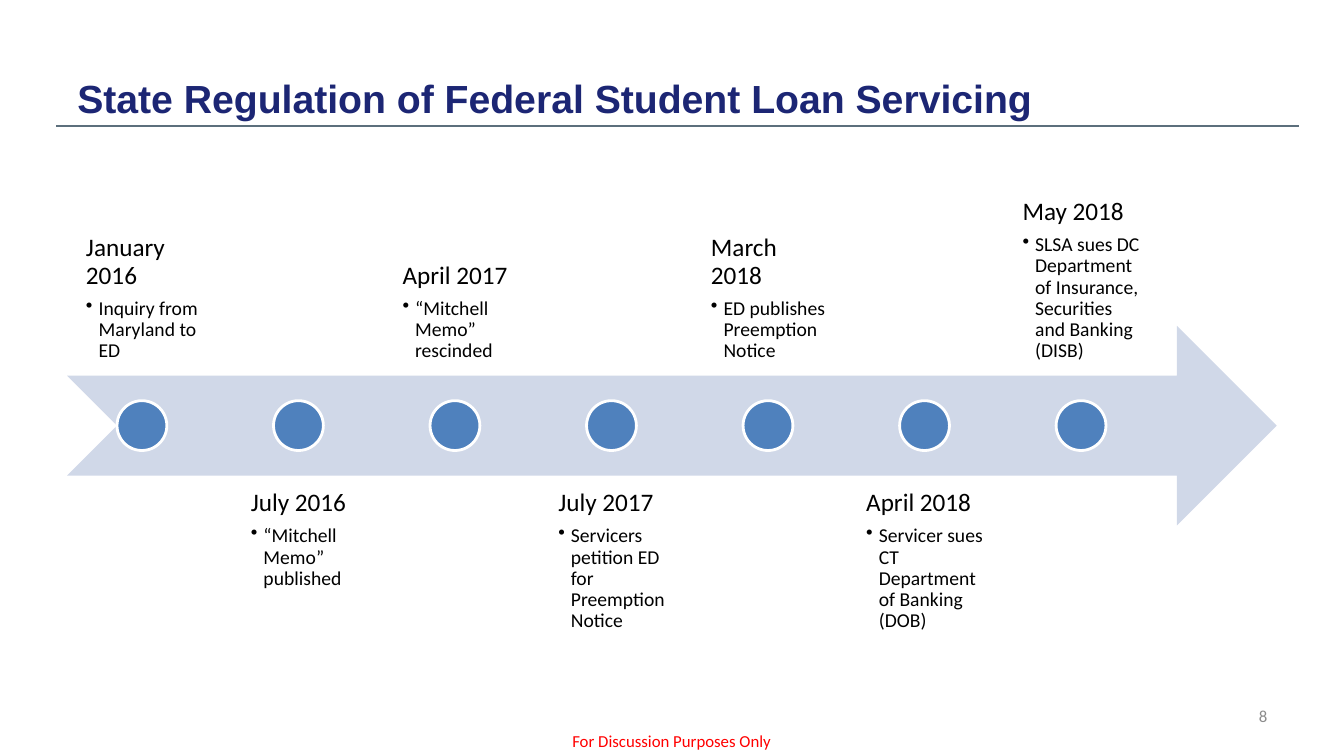
import pptx
import pptx.dml.color
import pptx.enum.shapes
import pptx.enum.text
import pptx.oxml
import pptx.oxml.ns
import pptx.util

Pt = pptx.util.Pt
RGBColor = pptx.dml.color.RGBColor
Shape = pptx.enum.shapes.MSO_SHAPE
Anchor = pptx.enum.text.MSO_ANCHOR
Align = pptx.enum.text.PP_ALIGN

NAVY = RGBColor(0x1C, 0x26, 0x74)
SLATE = RGBColor(0x5C, 0x6F, 0x7C)
PALE_BLUE = RGBColor(0xD0, 0xD8, 0xE8)
BLUE = RGBColor(0x4F, 0x81, 0xBD)
WHITE = RGBColor(0xFF, 0xFF, 0xFF)
BLACK = RGBColor(0x00, 0x00, 0x00)
GRAY = RGBColor(0x8C, 0x8C, 0x8C)
RED = RGBColor(0xFF, 0x00, 0x00)

EVENTS = [
    ("January 2016", "Inquiry from Maryland to ED"),
    ("July 2016", "“Mitchell Memo” published"),
    ("April 2017", "“Mitchell Memo” rescinded"),
    ("July 2017", "Servicers petition ED for Preemption Notice"),
    ("March 2018", "ED publishes Preemption Notice"),
    ("April 2018", "Servicer sues CT Department of Banking (DOB)"),
    ("May 2018", "SLSA sues DC Department of Insurance, Securities and Banking (DISB)"),
]

FIRST_CENTER = 101.4
EVENT_STEP = 111.8
ARROW_TOP = 232.7
ARROW_HEIGHT = 142.6
EVENT_WIDTH = 106.6
EVENT_TOP_ABOVE = 126
EVENT_TOP_BELOW = 339.8
DOT_SIZE = 35.6


def write(paragraph, text, size=18, color=BLACK, font="Calibri", bold=False,
          align=Align.LEFT, line_spacing=None, space_after=0, bullet_indent=None):
    if bullet_indent:
        paragraph.level = 1
        properties = paragraph._p.get_or_add_pPr()
        properties.set("marL", str(Pt(bullet_indent)))
        properties.set("indent", str(-Pt(bullet_indent)))
        bullet = pptx.oxml.parse_xml(
            f'<a:buChar {pptx.oxml.ns.nsdecls("a")} char="•"/>')
        properties.append(bullet)
    paragraph.alignment = align
    paragraph.space_before = Pt(0)
    paragraph.space_after = Pt(space_after)
    if line_spacing:
        paragraph.line_spacing = line_spacing
    run = paragraph.add_run()
    run.text = text
    run.font.size = Pt(size)
    run.font.name = font
    run.font.bold = bold
    run.font.color.rgb = color


def add_title(slide, text):
    title = slide.shapes.title
    title.left, title.top, title.width, title.height = Pt(48), Pt(0), Pt(864), Pt(90)
    frame = title.text_frame
    frame.auto_size = pptx.enum.text.MSO_AUTO_SIZE.NONE
    frame.vertical_anchor = Anchor.BOTTOM
    write(frame.paragraphs[0], text, size=28, color=NAVY, font="Arial", bold=True)


def add_rule(slide, left, right, y):
    rule = slide.shapes.add_connector(
        pptx.enum.shapes.MSO_CONNECTOR.STRAIGHT, Pt(left), Pt(y), Pt(right), Pt(y))
    rule.line.color.rgb = SLATE
    rule.line.width = Pt(1.25)
    rule._element.spPr.append(
        pptx.oxml.parse_xml(f'<a:effectLst {pptx.oxml.ns.nsdecls("a")}/>'))


def add_filled_shape(slide, kind, left, top, width, height, fill, outline=None):
    shape = slide.shapes.add_shape(kind, Pt(left), Pt(top), Pt(width), Pt(height))
    shape.shadow.inherit = False
    shape.fill.solid()
    shape.fill.fore_color.rgb = fill
    if outline is None:
        shape.line.fill.background()
    else:
        shape.line.color.rgb = outline
        shape.line.width = Pt(2)


def add_text_frame(slide, left, top, width, height):
    box = slide.shapes.add_textbox(Pt(left), Pt(top), Pt(width), Pt(height))
    box.text_frame.word_wrap = True
    return box.text_frame


def add_event(slide, center, date, detail, above):
    top = EVENT_TOP_ABOVE if above else EVENT_TOP_BELOW
    frame = add_text_frame(
        slide, center - EVENT_WIDTH / 2, top, EVENT_WIDTH, ARROW_HEIGHT)
    frame.margin_left = frame.margin_right = Pt(10.1)
    frame.margin_top = frame.margin_bottom = Pt(10.1)
    frame.vertical_anchor = Anchor.BOTTOM if above else Anchor.TOP
    frame._txBody.bodyPr.set("anchorCtr", "1")
    write(frame.paragraphs[0], date, line_spacing=0.9, space_after=6.3)
    write(frame.add_paragraph(), detail, size=14, line_spacing=0.9,
          space_after=2.1, bullet_indent=9)
    add_filled_shape(
        slide, Shape.OVAL, center - DOT_SIZE / 2,
        ARROW_TOP + (ARROW_HEIGHT - DOT_SIZE) / 2, DOT_SIZE, DOT_SIZE, BLUE, WHITE)


def add_timeline(slide):
    add_filled_shape(slide, Shape.NOTCHED_RIGHT_ARROW, 48, ARROW_TOP, 864,
                     ARROW_HEIGHT, PALE_BLUE)
    for index, (date, detail) in enumerate(EVENTS):
        add_event(slide, FIRST_CENTER + index * EVENT_STEP, date, detail,
                  above=index % 2 == 0)


def main():
    presentation = pptx.Presentation()
    presentation.slide_width = Pt(960)
    presentation.slide_height = Pt(540)
    slide = presentation.slides.add_slide(presentation.slide_layouts[5])
    add_rule(slide, 40.3, 928, 90)
    add_title(slide, "State Regulation of Federal Student Loan Servicing")
    add_timeline(slide)
    page_number = add_text_frame(slide, 688.3, 500.4, 224, 28.8)
    write(page_number.paragraphs[0], "8", size=12, color=GRAY, align=Align.RIGHT)
    disclaimer = add_text_frame(slide, 292.3, 518.4, 375, 23.8)
    write(disclaimer.paragraphs[0], "For Discussion Purposes Only", size=12,
          color=RED, align=Align.CENTER)
    presentation.save("out.pptx")


if __name__ == "__main__":
    main()
